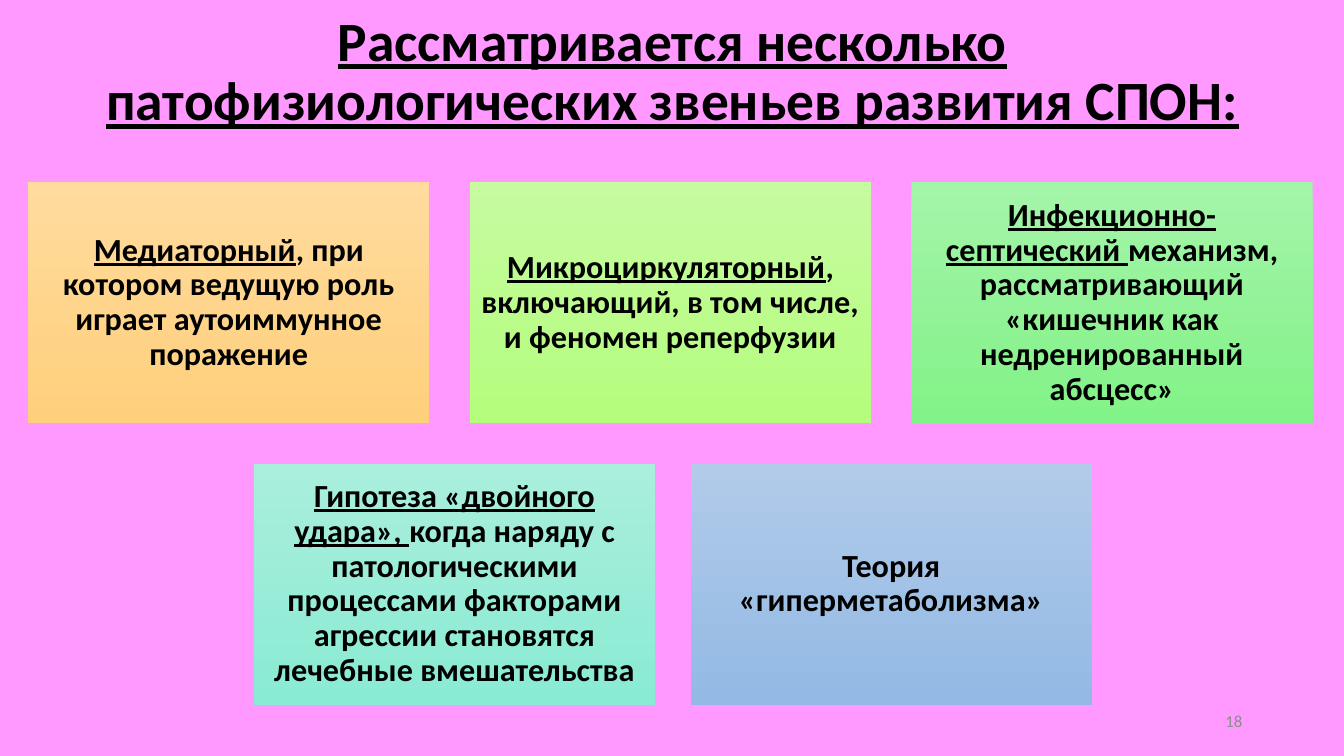
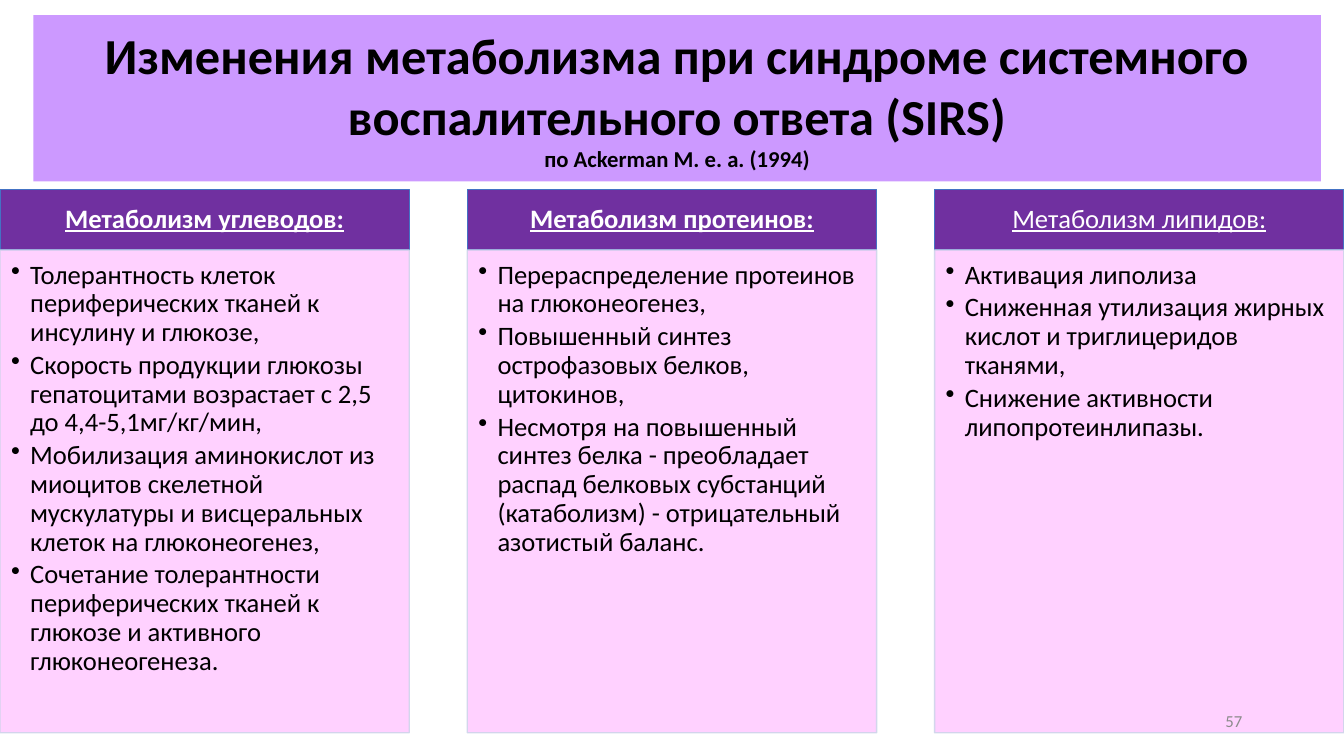
from lxml import etree
from pptx import Presentation
from pptx.dml.color import RGBColor
from pptx.enum import shapes, text
from pptx.oxml import ns
from pptx.util import Inches, Pt

C = {"pink": "FF99FF", "white": "FFFFFF", "black": "000000", "gray": "8C8C8C",
     "lilac": "CC99FF", "purple": "7030A0", "blue": "4472C4",
     "rose": "FFCCFF", "edge": "CFD5EA"}
FONT = "Calibri"
CENTER, RIGHT, LEFT = text.PP_ALIGN.CENTER, text.PP_ALIGN.RIGHT, text.PP_ALIGN.LEFT
MIDDLE, TOP = text.MSO_ANCHOR.MIDDLE, text.MSO_ANCHOR.TOP

# Content: mechanisms as (underlined part, rest, gradient start, gradient end)
LINKS_TITLE = "Рассматривается несколько патофизиологических звеньев развития СПОН:"
LINKS = [
    {"left": 0.28, "top": 1.81, "gap": 0.4, "cards": [
        ("Медиаторный", ", при котором ведущую роль играет аутоиммунное поражение",
         "FFDB9E", "FFD07C"),
        ("Микроциркуляторный", ", включающий, в том числе, и феномен реперфузии",
         "C6FBA0", "B4FD7D"),
        ("Инфекционно-септический ",
         "механизм, рассматривающий «кишечник как недренированный абсцесс»",
         "A4F4A9", "82F388")]},
    {"left": 2.52, "top": 4.6, "gap": 0.35, "cards": [
        ("Гипотеза «двойного удара», ",
         "когда наряду с патологическими процессами факторами агрессии "
         "становятся лечебные вмешательства", "AAEEDD", "89EBD3"),
        ("", "Теория «гиперметаболизма»", "B1CBE9", "93B9E4")]},
]
CARD_W, CARD_H = 3.98, 2.39

SIRS_TITLE = "Изменения метаболизма при синдроме системного воспалительного ответа (SIRS)"
SIRS_SOURCE = "по Ackerman M. e. a. (1994)"
# Columns as (heading, bold heading, points)
COLUMNS = [
    ("Метаболизм углеводов:", True, [
        "Толерантность клеток периферических тканей к инсулину и глюкозе,",
        "Скорость продукции глюкозы гепатоцитами возрастает с 2,5 до 4,4-5,1мг/кг/мин,",
        "Мобилизация аминокислот из миоцитов скелетной мускулатуры "
        "и висцеральных клеток на глюконеогенез,",
        "Сочетание толерантности периферических тканей к глюкозе "
        "и активного глюконеогенеза."]),
    ("Метаболизм протеинов:", True, [
        "Перераспределение протеинов на глюконеогенез,",
        "Повышенный синтез острофазовых белков, цитокинов,",
        "Несмотря на повышенный синтез белка - преобладает распад белковых "
        "субстанций (катаболизм) - отрицательный азотистый баланс."]),
    ("Метаболизм липидов:", False, [
        "Активация липолиза",
        "Сниженная утилизация жирных кислот и триглицеридов тканями,",
        "Снижение активности липопротеинлипазы."]),
]
SLIDE_W, COL_W = 13.33, 4.06
HEAD_TOP, HEAD_H, BODY_H = 1.88, 0.6, 4.79


def rgb(name):
    return RGBColor.from_string(C.get(name, name))


def add_run(p, words, size, color="black", **fmt):
    r = p.add_run()
    r.text = words
    for key, value in {"name": FONT, "size": Pt(size), **fmt}.items():
        setattr(r.font, key, value)
    r.font.color.rgb = rgb(color)


def set_frame(tf, anchor=MIDDLE, insets=(0.1, 0.05, 0.1, 0.05)):
    tf.word_wrap = True
    tf.auto_size = text.MSO_AUTO_SIZE.NONE
    tf.vertical_anchor = anchor
    for side, inset in zip(("left", "top", "right", "bottom"), insets):
        setattr(tf, f"margin_{side}", Inches(inset))


def set_par(p, align=CENTER, spacing=0.9):
    p.alignment, p.line_spacing = align, spacing
    return p


def add_rect(s, *box):
    sp = s.shapes.add_shape(shapes.MSO_SHAPE.RECTANGLE, *map(Inches, box))
    sp.shadow.inherit = False
    return sp


def paint(sp, fill, line, alpha=None):
    sp.fill.solid()
    sp.fill.fore_color.rgb = rgb(fill)
    sp.line.color.rgb = rgb(line)
    sp.line.width = Pt(1)
    if alpha:
        for color in sp._element.spPr.iter(ns.qn("a:srgbClr")):
            etree.SubElement(color, ns.qn("a:alpha"), val=str(alpha * 1000))


def add_bullet(p):
    pPr = p._p.get_or_add_pPr()
    indent = Inches(0.19)
    pPr.set("marL", str(indent))
    pPr.set("indent", str(-indent))
    etree.SubElement(pPr, ns.qn("a:buChar"), char="•")


def start_slide(prs, background, *title_box):
    s = prs.slides.add_slide(prs.slide_layouts[5])
    s.background.fill.solid()
    s.background.fill.fore_color.rgb = rgb(background)
    title = s.shapes.title
    title.left, title.top, title.width, title.height = map(Inches, title_box)
    set_frame(title.text_frame)
    return s, title


def add_number(s, number):
    tf = s.shapes.add_textbox(*map(Inches, (9.42, 6.95, 3, 0.4))).text_frame
    set_frame(tf)
    add_run(set_par(tf.paragraphs[0], RIGHT, 1.0), number, 12, "gray")


def build_links(prs):
    s, title = start_slide(prs, "pink", 0.92, 0, 11.5, 1.45)
    add_run(set_par(title.text_frame.paragraphs[0]), LINKS_TITLE, 39.6,
            bold=True, underline=True)
    # Rows of gradient cards
    for row in LINKS:
        for i, (key, rest, start, end) in enumerate(row["cards"]):
            left = row["left"] + i * (CARD_W + row["gap"])
            sp = add_rect(s, left, row["top"], CARD_W, CARD_H)
            sp.line.fill.background()
            sp.fill.gradient()
            sp.fill.gradient_angle = 270
            for stop, color in zip(sp.fill.gradient_stops, (start, end)):
                stop.color.rgb = rgb(color)
            set_frame(sp.text_frame, insets=(0.1,) * 4)
            p = set_par(sp.text_frame.paragraphs[0])
            if key:
                add_run(p, key, 23, bold=True, underline=True)
            add_run(p, rest, 23, bold=True)
    add_number(s, "18")


def build_sirs(prs):
    s, title = start_slide(prs, "white", 0.33, 0.15, 12.77, 1.65)
    title.fill.solid()
    title.fill.fore_color.rgb = rgb("lilac")
    tf = title.text_frame
    add_run(set_par(tf.paragraphs[0], spacing=1.0), SIRS_TITLE, 36, bold=True)
    add_run(set_par(tf.add_paragraph(), spacing=1.0), SIRS_SOURCE, 16.2, bold=True)
    # Columns: heading above a bulleted panel
    step = (SLIDE_W - COL_W) / (len(COLUMNS) - 1)
    for i, (heading, bold, points) in enumerate(COLUMNS):
        head = add_rect(s, i * step, HEAD_TOP, COL_W, HEAD_H)
        paint(head, "purple", "blue")
        set_frame(head.text_frame, insets=(0.15, 0.08, 0.15, 0.08))
        add_run(set_par(head.text_frame.paragraphs[0]), heading, 19, "white",
                bold=bold, underline=True)

        body = add_rect(s, i * step, HEAD_TOP + HEAD_H, COL_W, BODY_H)
        paint(body, "rose", "edge", alpha=90)
        tf = body.text_frame
        set_frame(tf, TOP, (0.11, 0.11, 0.15, 0.17))
        for n, point in enumerate(points):
            p = set_par(tf.add_paragraph() if n else tf.paragraphs[0], LEFT)
            p.space_after = Pt(3)
            add_bullet(p)
            add_run(p, point, 19)
    add_number(s, "57")


def main():
    prs = Presentation()
    prs.slide_width, prs.slide_height = Inches(SLIDE_W), Inches(7.5)
    build_links(prs)
    build_sirs(prs)
    prs.save("out.pptx")


if __name__ == "__main__":
    main()
